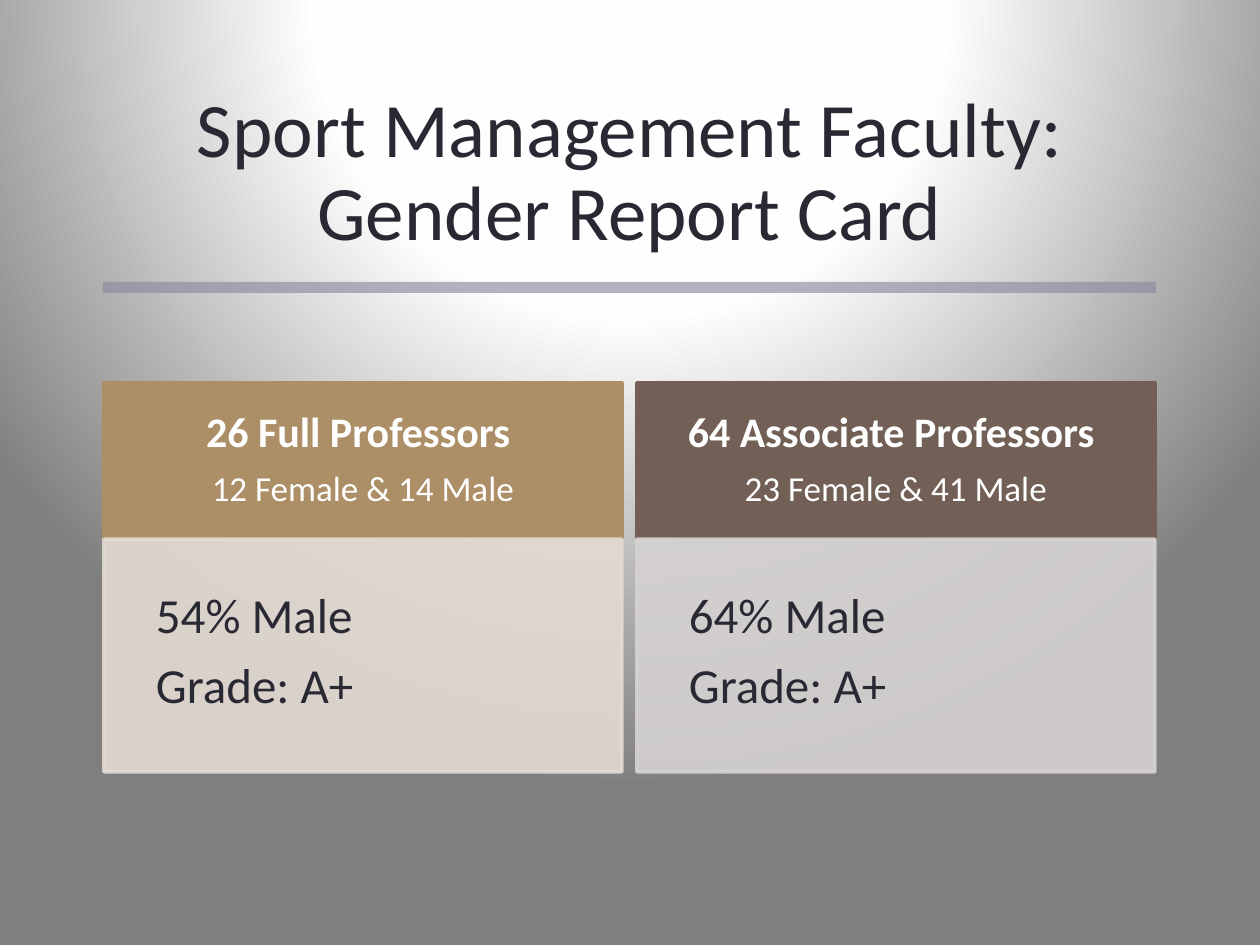
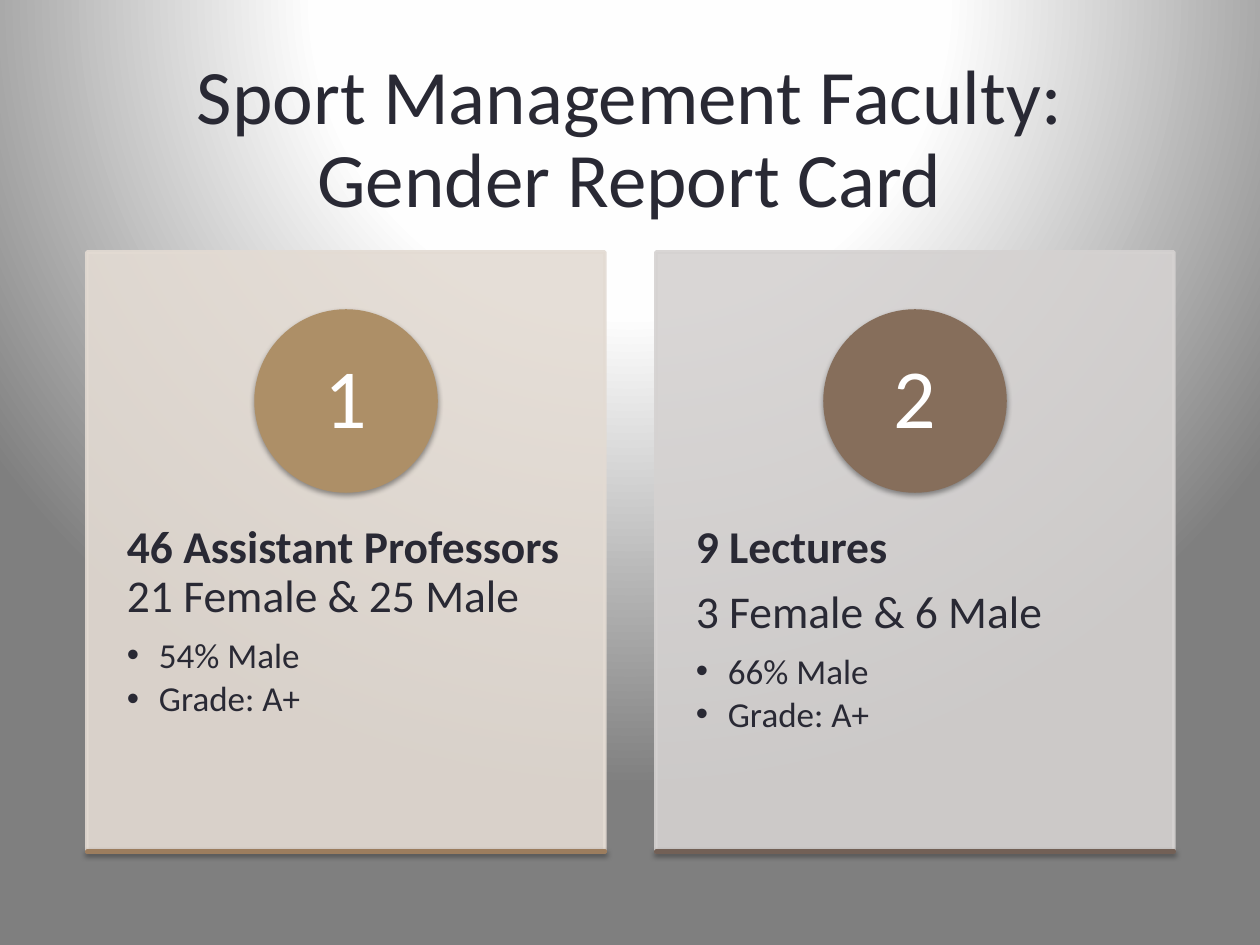
from collections import namedtuple

from pptx import Presentation
from pptx import util as u
from pptx.dml.color import RGBColor
from pptx.enum import shapes, text
from pptx.oxml import parse_xml
from pptx.oxml.ns import nsdecls, qn

PX = 914400 / 126  # EMU in one px
FONT = "Calibri"
INK = RGBColor(0x29, 0x29, 0x34)
WHITE = RGBColor(0xFF, 0xFF, 0xFF)
LAVENDER = RGBColor(0x8A, 0x8A, 0xA3)
GOLD = RGBColor(0xAD, 0x8F, 0x67)
BRONZE = RGBColor(0x9C, 0x7D, 0x5E)
COCOA = RGBColor(0x86, 0x6E, 0x5B)
BROWN = RGBColor(0x72, 0x60, 0x56)
CREAM = RGBColor(0xE3, 0xDB, 0xD3)
SILVER = RGBColor(0xD5, 0xD2, 0xD1)
PANELS = (CREAM, SILVER)
RECT = shapes.MSO_SHAPE.RECTANGLE
OVAL = shapes.MSO_SHAPE.OVAL
TITLE = "Sport Management Faculty: Gender Report Card"
COLUMN_W = 518

BACKDROP = f"""<a:gradFill {nsdecls('a')} rotWithShape="1"><a:gsLst>
<a:gs pos="0"><a:srgbClr val="FFFFFF"/></a:gs>
<a:gs pos="40000"><a:srgbClr val="FEFEFE"/></a:gs>
<a:gs pos="100000"><a:srgbClr val="7F7F7F"/></a:gs></a:gsLst>
<a:path path="circle"><a:fillToRect l="50000" t="-80000" r="50000" b="180000"/></a:path>
</a:gradFill>"""
SHADOW = f"""<a:outerShdw {nsdecls('a')} blurRad="40000" dist="20000" dir="5400000"
rotWithShape="0"><a:srgbClr val="000000"><a:alpha val="38000"/></a:srgbClr></a:outerShdw>"""

# bold and plain are the two parts of one paragraph
Line = namedtuple("Line", "size bold plain bullet", defaults=("", "", False))


def px(n):
    return u.Emu(round(n * PX))


class Deck:
    def __init__(self):
        self.prs = Presentation()
        self.prs.slide_width, self.prs.slide_height = px(1260), px(945)
        master = self.prs.slide_master
        master.background.fill.solid()
        bg_pr = master.element.cSld.bg.bgPr
        bg_pr.replace(bg_pr[0], parse_xml(BACKDROP))

    def slide(self, title, *box):
        self.s = self.prs.slides.add_slide(self.prs.slide_layouts[5])
        sp = self.s.shapes.title
        sp.left, sp.top, sp.width, sp.height = map(px, box)
        sp.text_frame.auto_size = text.MSO_AUTO_SIZE.NONE
        self.put_text(sp, [Line(44, plain=title)], INK, (13, 6), middle=True, gap=0)

    def shape(self, kind, box, color, opacity=100, outline=True, shadow=False):
        sp = self.s.shapes.add_shape(kind, *map(px, box))
        sp.fill.solid()
        sp.fill.fore_color.rgb = color
        if outline:
            sp.line.color.rgb = color
            sp.line.width = u.Pt(2)
        else:
            sp.line.fill.background()
        sp.shadow.inherit = False
        sp_pr = sp.element.spPr
        if opacity < 100:
            for clr in sp_pr.iter(qn("a:srgbClr")):
                clr.append(parse_xml(f'<a:alpha {nsdecls("a")} val="{opacity * 1000}"/>'))
        if shadow:
            sp_pr.find(qn("a:effectLst")).append(parse_xml(SHADOW))
        return sp

    def textbox(self, box, lines, color, inset):
        self.put_text(self.s.shapes.add_textbox(*map(px, box)), lines, color, inset)

    def put_text(self, sp, lines, color, inset, middle=False, gap=0.35):
        """Fill a shape with lines; middle centres them both ways."""
        tf = sp.text_frame
        tf.word_wrap = True
        tf.margin_left = tf.margin_right = px(inset[0])
        tf.margin_top = tf.margin_bottom = px(inset[1])
        tf.vertical_anchor = text.MSO_ANCHOR.MIDDLE if middle else text.MSO_ANCHOR.TOP
        for i, line in enumerate(lines):
            p = tf.add_paragraph() if i else tf.paragraphs[0]
            p.alignment = text.PP_ALIGN.CENTER if middle else text.PP_ALIGN.LEFT
            p.line_spacing = 0.9
            p.space_before = u.Pt(0)
            p.space_after = u.Pt(round(line.size * (0.15 if line.bullet else gap), 1))
            if line.bullet:
                self.bullet(p)
            p.font.name, p.font.size = FONT, u.Pt(line.size)
            p.font.color.rgb = color
            for words, bold in ((line.bold, True), (line.plain, False)):
                if words:
                    r = p.add_run()
                    r.text, r.font.bold = words, bold

    def bullet(self, p):
        p.level = 1
        p_pr = p._p.get_or_add_pPr()
        p_pr.set("marL", str(px(32)))
        p_pr.set("indent", str(px(-32)))
        p_pr.append(parse_xml(f'<a:buFont {nsdecls("a")} typeface="Arial"/>'))
        p_pr.append(parse_xml(f'<a:buChar {nsdecls("a")} char="•"/>'))


def professors_slide(deck):
    deck.slide(TITLE, 90, 83, 1080, 183)
    deck.shape(RECT, (103, 282, 1053, 11), LAVENDER, opacity=65, outline=False)
    ranks = (
        ("26 Full Professors ", "12 Female & 14 Male", "54% Male", GOLD),
        ("64 Associate Professors ", "23 Female & 41 Male", "64% Male", BROWN),
    )
    for i, (rank, split, share, color) in enumerate(ranks):
        x = 104 + 533 * i
        header = deck.shape(RECT, (x, 383, COLUMN_W, 155), color)
        deck.put_text(header, [Line(24, bold=rank), Line(20, plain=split)],
                      WHITE, (40, 40), middle=True)
        panel = deck.shape(RECT, (x, 539, COLUMN_W, 233), PANELS[i], opacity=90)
        deck.put_text(panel, [Line(28, plain=share), Line(28, plain="Grade: A+")],
                      INK, (52, 52))


def lecturers_slide(deck):
    deck.slide(TITLE, 87, 50, 1086, 183)
    ranks = (
        ([Line(26, "46 Assistant Professors ", "21 Female & 25 Male")],
         "54% Male", GOLD, BRONZE),
        ([Line(26, bold="9 Lectures"), Line(26, plain="3 Female & 6 Male")],
         "66% Male", COCOA, BROWN),
    )
    for i, (heading, share, disc_color, base_color) in enumerate(ranks):
        x = 87 + 569 * i
        deck.shape(RECT, (x, 252, COLUMN_W, 600), PANELS[i], opacity=90)
        grades = [Line(20, plain=words, bullet=True) for words in (share, "Grade: A+")]
        deck.textbox((x, 479, COLUMN_W, 360), heading + grades, INK, (40, 45))
        disc = deck.shape(OVAL, (x + 169, 311, 180, 180), disc_color, shadow=True)
        deck.put_text(disc, [Line(48, plain=str(i + 1))], WHITE, (14, 1), middle=True)
        deck.shape(RECT, (x, 851, COLUMN_W, 1), base_color, shadow=True)


def main():
    deck = Deck()
    professors_slide(deck)
    lecturers_slide(deck)
    deck.prs.save("out.pptx")


if __name__ == "__main__":
    main()
